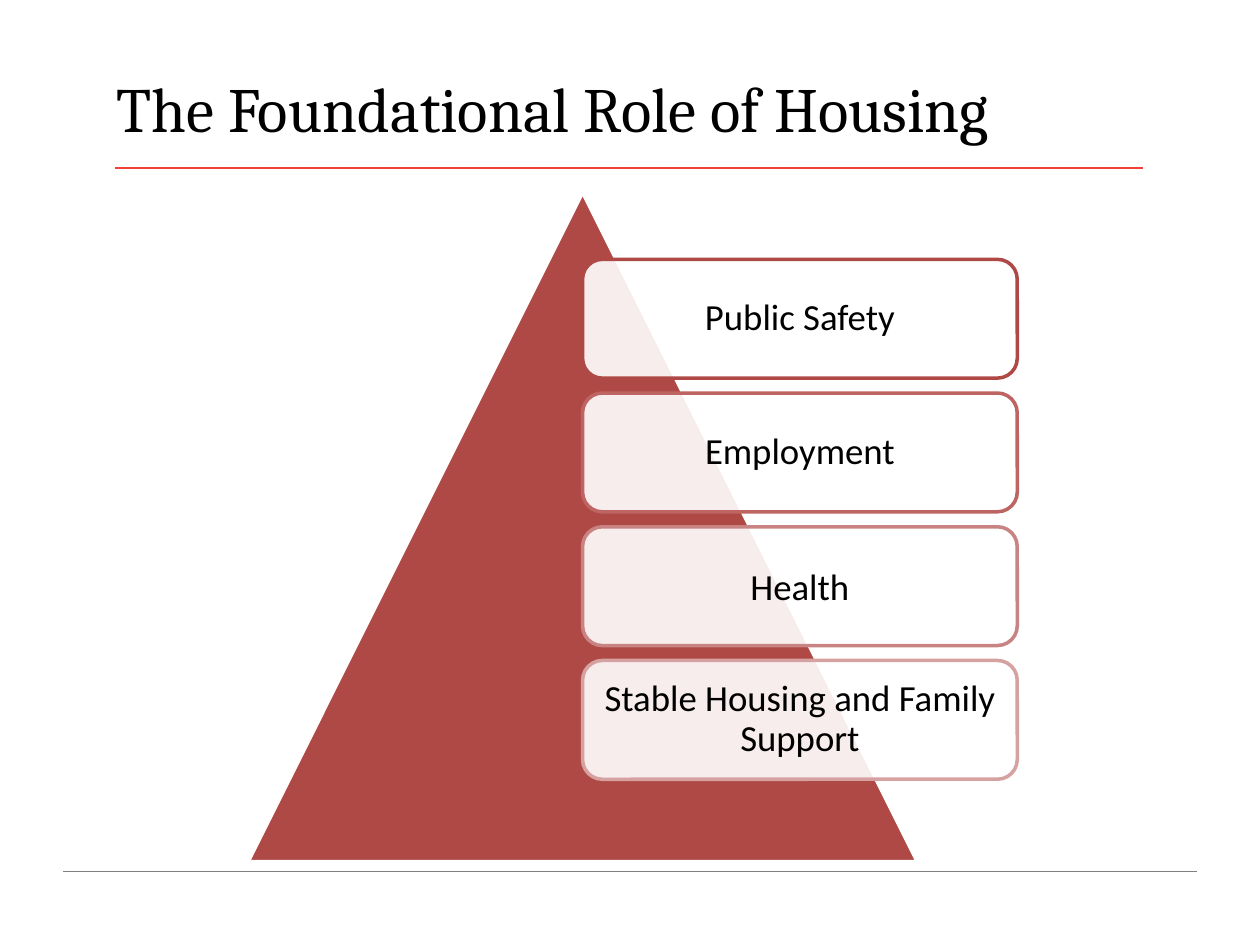
from dataclasses import dataclass

from lxml.etree import SubElement
from pptx import Presentation
from pptx.dml.color import RGBColor
from pptx.enum.shapes import MSO_CONNECTOR, MSO_SHAPE
from pptx.enum.text import MSO_ANCHOR, PP_ALIGN
from pptx.oxml.ns import qn
from pptx.util import Pt


@dataclass(frozen=True)
class Theme:
    white: str = "FFFFFF"
    black: str = "000000"
    pyramid: str = "AE4946"
    title_rule: str = "EF4136"
    footer_rule: str = "7F7F7F"
    heading_font: str = "Cambria"
    body_font: str = "Calibri"
    title_size: float = 36
    label_size: float = 21
    outline: float = 2
    rule: float = 0.75


@dataclass(frozen=True)
class Level:
    text: str
    border: str
    line_spacing: float = 0.9


@dataclass(frozen=True)
class Rule:
    left: float
    right: float
    top: float
    color: str


THEME = Theme()
LEVELS = (
    Level("Public Safety", "AE4946"),
    Level("Employment", "BE6462"),
    Level("Health", "C98382", 1.0),
    Level("Stable Housing and Family Support", "D6A2A1"),
)
RULES = (
    Rule(36, 684, 498.2, THEME.footer_rule),
    Rule(66, 653, 96, THEME.title_rule),
)
LEVEL_LEFT, LEVEL_TOP = 332.9, 148.2
LEVEL_WIDTH, LEVEL_HEIGHT, LEVEL_PITCH = 248.4, 67.9, 76.4


def apply_format(target, values: dict) -> None:
    for name, value in values.items():
        setattr(target, name, value)


def set_font(font, name: str, size: float) -> None:
    apply_format(font, {"name": name, "size": Pt(size), "bold": False})
    font.color.rgb = RGBColor.from_string(THEME.black)


def set_margins(frame, margin: float) -> None:
    sides = ("left", "top", "right", "bottom")
    apply_format(frame, {f"margin_{side}": Pt(margin) for side in sides})


def add_title(slide, text: str) -> None:
    title = slide.shapes.title
    apply_format(title, {"left": Pt(66.7), "top": Pt(39.6),
                         "width": Pt(586.8), "height": Pt(43.9)})
    frame = title.text_frame
    set_margins(frame, 0)
    apply_format(frame, {"word_wrap": True, "vertical_anchor": MSO_ANCHOR.TOP})
    para = frame.paragraphs[0]
    para.alignment = PP_ALIGN.LEFT
    span = para.add_run()
    span.text = text
    set_font(span.font, THEME.heading_font, THEME.title_size)


def add_rule(slide, rule: Rule) -> None:
    line = slide.shapes.add_connector(
        MSO_CONNECTOR.STRAIGHT, Pt(rule.left), Pt(rule.top), Pt(rule.right), Pt(rule.top))
    line.line.color.rgb = RGBColor.from_string(rule.color)
    line.line.width = Pt(THEME.rule)
    SubElement(line._element.spPr, qn("a:effectLst"))


def add_block(slide, kind, left: float, top: float, width: float, height: float,
              fill: str, border: str):
    block = slide.shapes.add_shape(kind, Pt(left), Pt(top), Pt(width), Pt(height))
    block.shadow.inherit = False
    block.fill.solid()
    block.fill.fore_color.rgb = RGBColor.from_string(fill)
    block.line.color.rgb = RGBColor.from_string(border)
    block.line.width = Pt(THEME.outline)
    return block


def add_level(slide, index: int, level: Level) -> None:
    box = add_block(slide, MSO_SHAPE.ROUNDED_RECTANGLE, LEVEL_LEFT,
                    LEVEL_TOP + index * LEVEL_PITCH, LEVEL_WIDTH, LEVEL_HEIGHT,
                    THEME.white, level.border)
    fill_color = box._element.spPr.find(qn("a:solidFill")).find(qn("a:srgbClr"))
    SubElement(fill_color, qn("a:alpha"), val="90000")
    frame = box.text_frame
    set_margins(frame, 6.3)
    apply_format(frame, {"word_wrap": True, "vertical_anchor": MSO_ANCHOR.MIDDLE})
    para = frame.paragraphs[0]
    apply_format(para, {"alignment": PP_ALIGN.CENTER, "line_spacing": level.line_spacing})
    span = para.add_run()
    span.text = level.text
    set_font(span.font, THEME.body_font, THEME.label_size)


def main() -> None:
    deck = Presentation()
    apply_format(deck, {"slide_width": Pt(720), "slide_height": Pt(540)})
    page = deck.slides.add_slide(deck.slide_layouts[5])
    add_title(page, "The Foundational Role of Housing")
    for rule in RULES:
        add_rule(page, rule)
    add_block(page, MSO_SHAPE.ISOSCELES_TRIANGLE, 141.8, 110, 382.3, 382.3,
              THEME.pyramid, THEME.white)
    for index, level in enumerate(LEVELS):
        add_level(page, index, level)
    deck.save("out.pptx")


if __name__ == "__main__":
    main()
